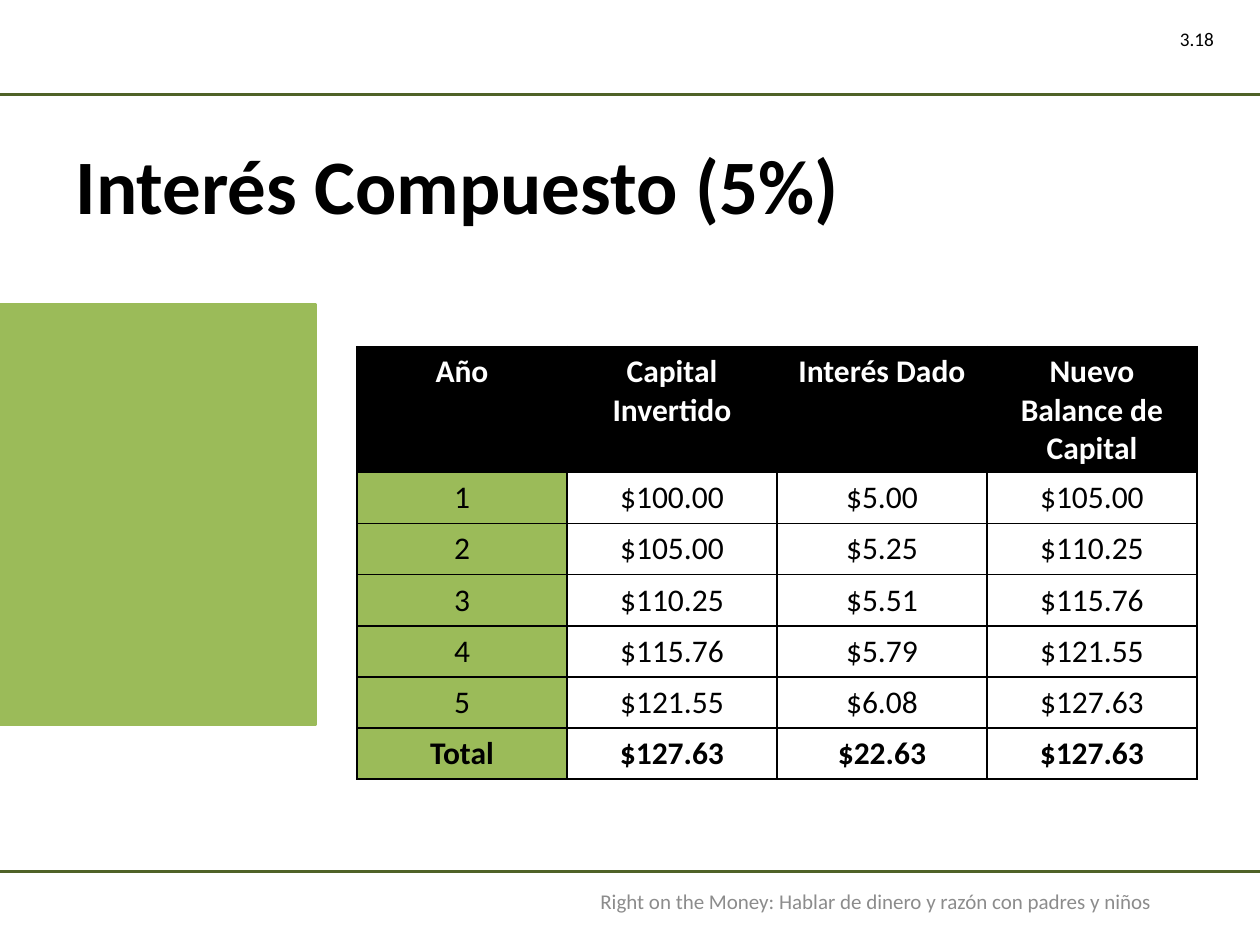
from lxml import etree
from pptx import Presentation
from pptx.dml.color import RGBColor
from pptx.enum import shapes, text
from pptx.oxml import ns
from pptx.util import Pt

BLACK = RGBColor(0x00, 0x00, 0x00)
WHITE = RGBColor(0xFF, 0xFF, 0xFF)
GREEN = RGBColor(0x9B, 0xBB, 0x59)
DARK_GREEN = RGBColor(0x4F, 0x62, 0x28)
GRAY = RGBColor(0x8C, 0x8C, 0x8C)
FONT = "Calibri"

HEADING = "Interés Compuesto (5%)"
PAGE_NUMBER = "3.18"
FOOTER = "Right on the Money: Hablar de dinero y razón con padres y niños"
BALANCES = [
    ("Año", "Capital Invertido", "Interés Dado", "Nuevo Balance de Capital"),
    ("1", "$100.00", "$5.00", "$105.00"),
    ("2", "$105.00", "$5.25", "$110.25"),
    ("3", "$110.25", "$5.51", "$115.76"),
    ("4", "$115.76", "$5.79", "$121.55"),
    ("5", "$121.55", "$6.08", "$127.63"),
    ("Total", "$127.63", "$22.63", "$127.63"),
]

SLIDE_WIDTH, SLIDE_HEIGHT = 720, 540
RULE_TOPS = (54, 498)
COLUMN_WIDTH, HEADER_HEIGHT, ROW_HEIGHT = 120, 72, 29.2


def write(frame, words, size, color, bold=False, align=text.PP_ALIGN.LEFT):
    frame.text = words
    frame.word_wrap = True
    paragraph = frame.paragraphs[0]
    paragraph.alignment = align
    font = paragraph.runs[0].font
    font.name, font.size, font.bold = FONT, Pt(size), bold
    font.color.rgb = color


def add_rule(slide, top):
    rule = slide.shapes.add_connector(
        shapes.MSO_CONNECTOR.STRAIGHT, 0, Pt(top), Pt(SLIDE_WIDTH), Pt(top))
    rule.line.color.rgb = DARK_GREEN
    rule.line.width = Pt(1.25)
    etree.SubElement(rule._element.spPr, ns.qn("a:effectLst"))


def outline(cell):
    properties = cell._tc.get_or_add_tcPr()
    for position, side in enumerate(("lnL", "lnR", "lnT", "lnB")):
        border = etree.Element(ns.qn(f"a:{side}"), w=str(Pt(1)))
        fill = etree.SubElement(border, ns.qn("a:solidFill"))
        etree.SubElement(fill, ns.qn("a:srgbClr"), val=str(BLACK))
        properties.insert(position, border)


def cell_fill(row, column):
    if row == 0:
        return BLACK
    return GREEN if column == 0 else WHITE


def add_balances(slide):
    rows, columns = len(BALANCES), len(BALANCES[0])
    height = HEADER_HEIGHT + (rows - 1) * ROW_HEIGHT
    table = slide.shapes.add_table(
        rows, columns, Pt(204), Pt(198), Pt(columns * COLUMN_WIDTH), Pt(height)).table
    for column in table.columns:
        column.width = Pt(COLUMN_WIDTH)
    for r, values in enumerate(BALANCES):
        table.rows[r].height = Pt(ROW_HEIGHT if r else HEADER_HEIGHT)
        for c, value in enumerate(values):
            cell = table.cell(r, c)
            cell.fill.solid()
            cell.fill.fore_color.rgb = cell_fill(r, c)
            outline(cell)
            write(cell.text_frame, value, 18, BLACK if r else WHITE,
                  r in (0, rows - 1), text.PP_ALIGN.CENTER)


def main():
    deck = Presentation()
    deck.slide_width, deck.slide_height = Pt(SLIDE_WIDTH), Pt(SLIDE_HEIGHT)
    slide = deck.slides.add_slide(deck.slide_layouts[5])

    heading = slide.shapes.title
    heading.left, heading.top, heading.width, heading.height = Pt(36), Pt(60), Pt(648), Pt(90)
    heading.text_frame.vertical_anchor = text.MSO_ANCHOR.MIDDLE
    write(heading.text_frame, HEADING, 44, BLACK, bold=True)

    for top in RULE_TOPS:
        add_rule(slide, top)

    panel = slide.shapes.add_shape(
        shapes.MSO_SHAPE.RECTANGLE, 0, Pt(174), Pt(180), Pt(240))
    panel.shadow.inherit = False
    panel.fill.solid()
    panel.fill.fore_color.rgb = GREEN
    panel.line.color.rgb = GREEN
    panel.line.width = Pt(2)

    footer = slide.shapes.add_textbox(Pt(336), Pt(500.5), Pt(372), Pt(28.75))
    footer.text_frame.vertical_anchor = text.MSO_ANCHOR.MIDDLE
    write(footer.text_frame, FOOTER, 12, GRAY)

    page_number = slide.shapes.add_textbox(Pt(666), Pt(12), Pt(36), Pt(20.6))
    write(page_number.text_frame, PAGE_NUMBER, 11, BLACK, align=text.PP_ALIGN.CENTER)
    page_number.text_frame.auto_size = text.MSO_AUTO_SIZE.SHAPE_TO_FIT_TEXT

    add_balances(slide)
    deck.save("out.pptx")


if __name__ == "__main__":
    main()
